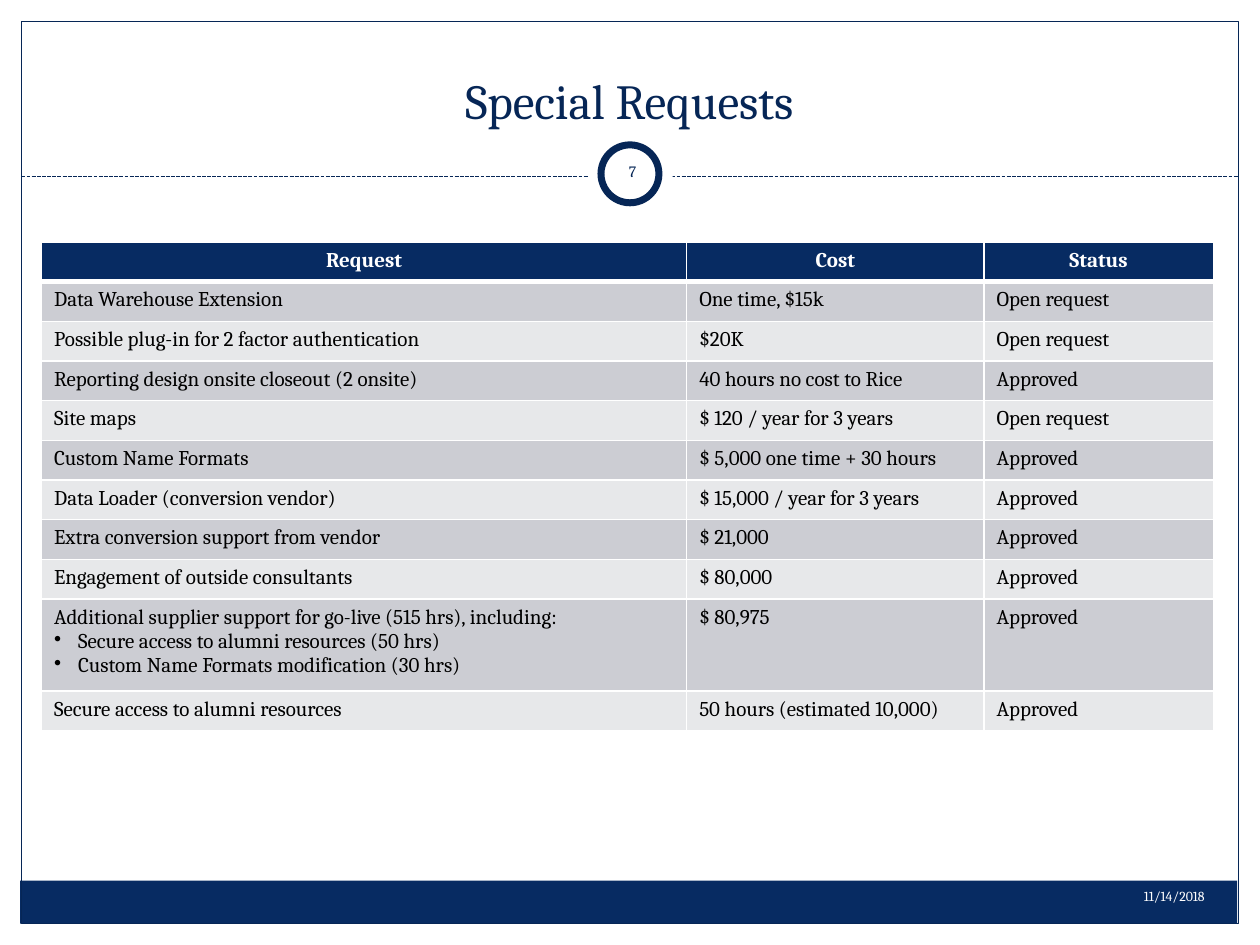
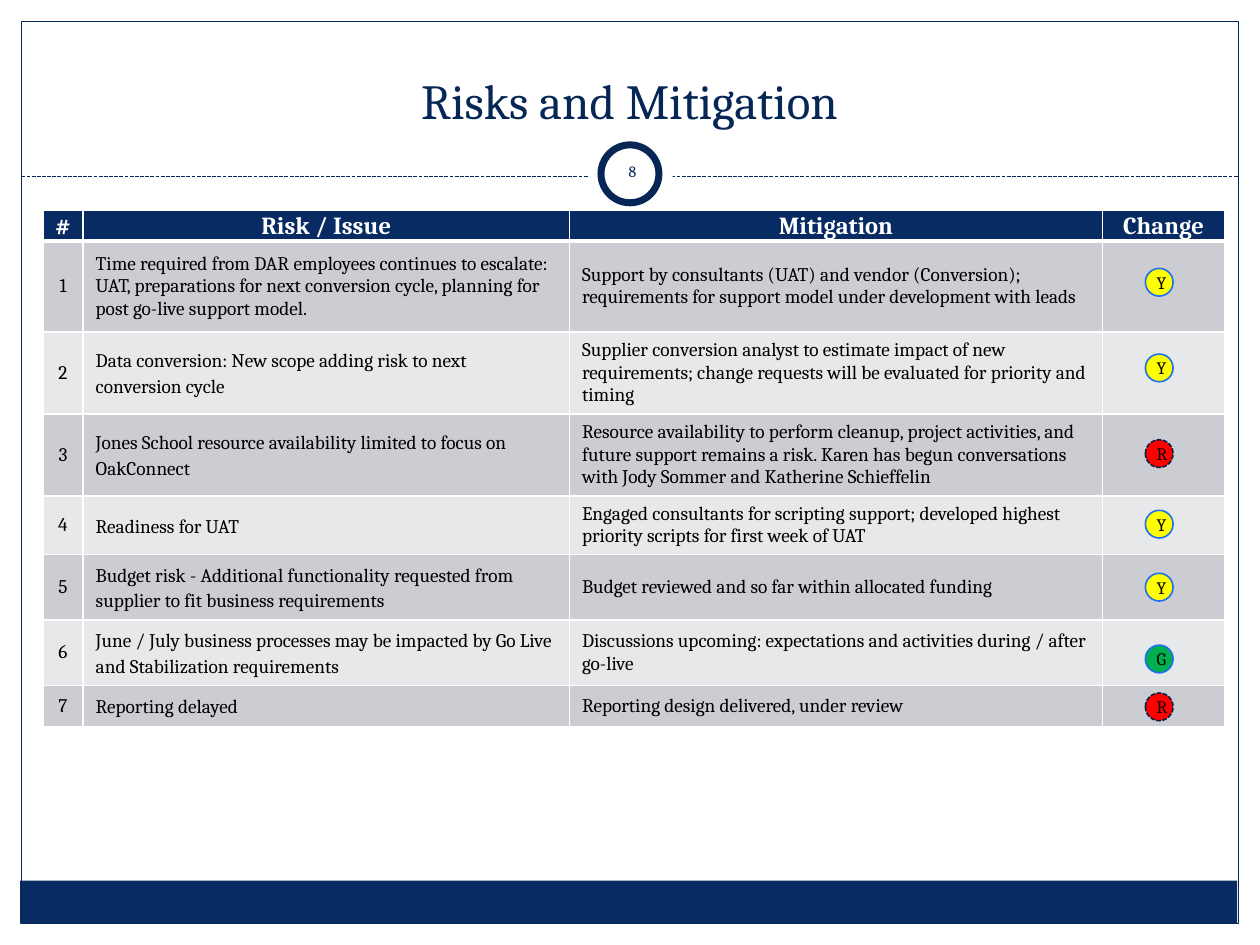
from dataclasses import dataclass
from typing import Any

import lxml.etree
import pptx
import pptx.dml.color
import pptx.enum.dml
import pptx.enum.shapes
import pptx.enum.text
import pptx.oxml.ns
import pptx.util

Inches = pptx.util.Inches
Pt = pptx.util.Pt
RGBColor = pptx.dml.color.RGBColor
Shape = pptx.enum.shapes.MSO_SHAPE
Align = pptx.enum.text.PP_ALIGN
Anchor = pptx.enum.text.MSO_ANCHOR
Dash = pptx.enum.dml.MSO_LINE
qn = pptx.oxml.ns.qn

# Shared look
FONT = "Cambria"
NAVY = RGBColor(0x06, 0x26, 0x56)
BAND = RGBColor(0x07, 0x2B, 0x62)
WHITE = RGBColor(0xFF, 0xFF, 0xFF)
BLACK = RGBColor(0, 0, 0)
ROW_DARK = RGBColor(0xCC, 0xCD, 0xD3)
ROW_LIGHT = RGBColor(0xE7, 0xE8, 0xEA)
RED = RGBColor(0xFF, 0, 0)
YELLOW = RGBColor(0xFF, 0xFF, 0)
GREEN = RGBColor(0, 0xB0, 0x50)
RING_BLUE = RGBColor(0x1C, 0x70, 0xEF)
RING_DARK = RGBColor(0x05, 0x20, 0x49)

Box = tuple[float, float, float, float]
Cell = str | list[str]  # a list is a lead line followed by bullets


@dataclass
class TableSpec:
    left: float
    top: float
    cols: list[float]
    rows: list[float]
    header: list[str]
    body: list[list[Cell]]
    header_size: float
    body_size: float
    anchor: Any = Anchor.TOP
    tight_header: bool = False
    centred_cols: tuple[int, ...] = ()


@dataclass
class Status:
    letter: str
    fill: RGBColor
    ring: RGBColor = RING_BLUE
    dash: Any = None


STATUSES = {
    "R": Status("R", RED, RING_DARK, Dash.SQUARE_DOT),
    "Y": Status("Y", YELLOW),
    "G": Status("G", GREEN),
}


def set_all(obj: Any, values: dict[str, Any]) -> None:
    for name, value in values.items():
        setattr(obj, name, value)


def add_run(p: Any, text: str, size: float, color: RGBColor, bold: bool = False) -> None:
    r = p.add_run()
    r.text = text
    set_all(r.font, {"name": FONT, "size": Pt(size), "bold": bold})
    r.font.color.rgb = color


def add_shape(s: Any, kind: Any, box: Box, fill: RGBColor | None = None,
              line: RGBColor | None = None, width: float = 0.75, dash: Any = None) -> Any:
    sp = s.shapes.add_shape(kind, *map(Inches, box))
    sp.shadow.inherit = False
    if fill is None:
        sp.fill.background()
    else:
        sp.fill.solid()
        sp.fill.fore_color.rgb = fill
    if line is None:
        sp.line.fill.background()
    else:
        sp.line.color.rgb = line
        set_all(sp.line, {"width": Pt(width), "dash_style": dash})
    return sp


def add_label(s: Any, box: Box, text: str, size: float, color: RGBColor,
              align: Any, **frame: Any) -> None:
    tf = s.shapes.add_textbox(*map(Inches, box)).text_frame
    set_all(tf, {"word_wrap": True, **frame})
    p = tf.paragraphs[0]
    p.alignment = align
    add_run(p, text, size, color)


def add_base_slide(prs: Any, title: str, number: int) -> Any:
    s = prs.slides.add_slide(prs.slide_layouts[5])

    # Title
    sp = s.shapes.title
    set_all(sp, dict(zip(("left", "top", "width", "height"),
                         map(Inches, (0.33, 0.25, 9.33, 0.83)))))
    tf = sp.text_frame
    set_all(tf, {"vertical_anchor": Anchor.BOTTOM, "word_wrap": True,
                 "auto_size": pptx.enum.text.MSO_AUTO_SIZE.NONE})
    p = tf.paragraphs[0]
    p.alignment = Align.CENTER
    add_run(p, title, 28, NAVY)

    # Footer band, frame and dashed rule
    add_shape(s, Shape.RECTANGLE, (0.16, 6.99, 9.66, 0.34), BAND)
    add_shape(s, Shape.RECTANGLE, (0.17, 0.17, 9.66, 7.16), line=NAVY)
    rule = s.shapes.add_connector(pptx.enum.shapes.MSO_CONNECTOR.STRAIGHT,
                                  Inches(0.17), Inches(1.4), Inches(9.83), Inches(1.4))
    rule.line.color.rgb = NAVY
    set_all(rule.line, {"width": Pt(0.75), "dash_style": Dash.SQUARE_DOT})
    lxml.etree.SubElement(rule._element.spPr, qn("a:effectLst"))

    # Slide number badge
    add_shape(s, Shape.OVAL, (4.67, 1.05, 0.67, 0.67), WHITE)
    add_shape(s, Shape.OVAL, (4.77, 1.15, 0.46, 0.46), WHITE, NAVY, 4)
    inset = Inches(0.05)
    add_label(s, (4.77, 1.12, 0.5, 0.48), str(number), 9, NAVY, Align.CENTER,
              vertical_anchor=Anchor.MIDDLE, margin_left=inset, margin_right=inset,
              margin_top=inset, margin_bottom=inset)
    return s


def add_borders(cell: Any, top: float, bottom: float) -> None:
    tc_pr = cell._tc.get_or_add_tcPr()
    for side, width in {"L": 1, "R": 1, "T": top, "B": bottom}.items():
        ln = lxml.etree.SubElement(tc_pr, qn(f"a:ln{side}"), w=str(Pt(width)))
        fill = lxml.etree.SubElement(ln, qn("a:solidFill"))
        lxml.etree.SubElement(fill, qn("a:srgbClr"), val=str(WHITE))


def add_bullet(p: Any) -> None:
    p_pr = p._p.get_or_add_pPr()
    indent = Inches(0.19)
    p_pr.set("marL", str(indent))
    p_pr.set("indent", str(-indent))
    lxml.etree.SubElement(p_pr, qn("a:buChar"), char="•")


def fill_cell(cell: Any, content: Cell, size: float, color: RGBColor,
              bold: bool, align: Any) -> None:
    tf = cell.text_frame
    for i, text in enumerate([content] if isinstance(content, str) else content):
        p = tf.add_paragraph() if i else tf.paragraphs[0]
        if i:
            add_bullet(p)
        p.alignment = align
        if text:
            add_run(p, text, size, color, bold)
        else:
            lxml.etree.SubElement(p._p, qn("a:endParaRPr"), sz=str(int(size * 100)))


def add_table(s: Any, spec: TableSpec) -> Any:
    table = s.shapes.add_table(len(spec.rows), len(spec.cols), Inches(spec.left),
                               Inches(spec.top), Inches(sum(spec.cols)),
                               Inches(sum(spec.rows))).table
    for col, width in zip(table.columns, spec.cols):
        col.width = Inches(width)
    for row, height in zip(table.rows, spec.rows):
        row.height = Inches(height)
    for i, row in enumerate([spec.header, *spec.body]):
        head = i == 0
        for j, content in enumerate(row):
            cell = table.cell(i, j)
            cell.vertical_anchor = spec.anchor
            if head and spec.tight_header:
                edge = Inches(0.01)
                set_all(cell, {"margin_left": edge, "margin_right": edge,
                               "margin_top": edge, "margin_bottom": 0})
            add_borders(cell, top=3 if i == 1 else 1, bottom=3 if head else 1)
            cell.fill.solid()
            cell.fill.fore_color.rgb = BAND if head else ROW_DARK if i % 2 else ROW_LIGHT
            centred = head or j in spec.centred_cols
            fill_cell(cell, content, spec.header_size if head else spec.body_size,
                      WHITE if head else BLACK, head,
                      Align.CENTER if centred else Align.LEFT)
    return table


# Special requests
REQUESTS: list[list[Cell]] = [
    ["Data Warehouse Extension", "One time, $15k", "Open request"],
    ["Possible plug-in for 2 factor authentication", "$20K", "Open request"],
    ["Reporting design onsite closeout (2 onsite)", "40 hours no cost to Rice", "Approved"],
    ["Site maps", "$ 120 / year for 3 years", "Open request"],
    ["Custom Name Formats", "$ 5,000 one time + 30 hours", "Approved"],
    ["Data Loader (conversion vendor)", "$ 15,000 / year for 3 years", "Approved"],
    ["Extra conversion support from vendor", "$ 21,000", "Approved"],
    ["Engagement of outside consultants", "$ 80,000", "Approved"],
    [["Additional supplier support for go-live (515 hrs), including:",
      "Secure access to alumni resources (50 hrs)",
      "Custom Name Formats modification (30 hrs)"], "$ 80,975", "Approved"],
    ["Secure access to alumni resources", "50 hours (estimated 10,000)", "Approved"],
]


def build_requests(prs: Any) -> None:
    s = add_base_slide(prs, "Special Requests", 7)
    add_label(s, (6.33, 7, 3.33, 0.4), "11/14/2018", 7.9, WHITE, Align.RIGHT)
    tall = 0.73
    line = (3.88 - tall) / len(REQUESTS)
    rows = [line] + [tall if isinstance(row[0], list) else line for row in REQUESTS]
    add_table(s, TableSpec(0.33, 1.92, [5.12, 2.36, 1.82], rows,
                           ["Request", "Cost", "Status"], REQUESTS, 12, 12))


# Risks: issue, mitigation, status letter, top of the status dot
RISKS: list[tuple[str, str, str, float]] = [
    ("Time required from DAR employees continues to escalate: UAT, preparations for next "
     "conversion cycle, planning for post go-live support model.",
     "Support by consultants (UAT) and vendor (Conversion); requirements for support "
     "model under development with leads", "Y", 2.13),
    ("Data conversion: New scope adding risk to next conversion cycle",
     "Supplier conversion analyst to estimate impact of new requirements; change requests "
     "will be evaluated for priority and timing", "Y", 2.81),
    ("Jones School resource availability limited to focus on OakConnect",
     "Resource availability to perform cleanup, project activities, and future support "
     "remains a risk. Karen has begun conversations with Jody Sommer and Katherine "
     "Schieffelin", "R", 3.49),
    ("Readiness for UAT",
     "Engaged consultants for scripting support; developed highest priority scripts for "
     "first week of UAT", "Y", 4.05),
    ("Budget risk - Additional functionality requested from supplier to fit business "
     "requirements", "Budget reviewed and so far within allocated funding", "Y", 4.55),
    ("June / July business processes may be impacted by Go Live and Stabilization "
     "requirements",
     "Discussions upcoming: expectations and activities during / after go-live", "G", 5.12),
    ("Reporting delayed", "Reporting design delivered, under review", "R", 5.5),
]


def add_status(s: Any, status: Status, top: float) -> None:
    sp = add_shape(s, Shape.OVAL, (9.09, top, 0.22, 0.22), status.fill,
                   status.ring, 0.9, status.dash)
    sp.text_frame.vertical_anchor = Anchor.MIDDLE
    p = sp.text_frame.paragraphs[0]
    p.alignment = Align.CENTER
    add_run(p, status.letter, 10, BLACK)


def build_risks(prs: Any) -> None:
    s = add_base_slide(prs, "Risks and Mitigation", 8)
    body: list[list[Cell]] = [[str(n), issue, mitigation, ""]
                              for n, (issue, mitigation, *_) in enumerate(RISKS, 1)]
    table = add_table(s, TableSpec(
        0.34, 1.67, [0.32, 3.86, 4.23, 0.97],
        [0.24, 0.72, 0.63, 0.63, 0.46, 0.5, 0.5, 0.33],
        ["#", "Risk / Issue", "Mitigation", "Change"], body, 14, 11,
        Anchor.MIDDLE, tight_header=True, centred_cols=(0,)))
    for i in range(2, len(RISKS) + 1):
        set_all(table.cell(i, 1).text_frame.paragraphs[0],
                {"line_spacing": 1.14, "space_after": Pt(3)})
    for *_, letter, top in RISKS:
        add_status(s, STATUSES[letter], top)


def main() -> None:
    prs = pptx.Presentation()
    set_all(prs, {"slide_width": Inches(10), "slide_height": Inches(7.5)})
    build_requests(prs)
    build_risks(prs)
    prs.save("out.pptx")


if __name__ == "__main__":
    main()
